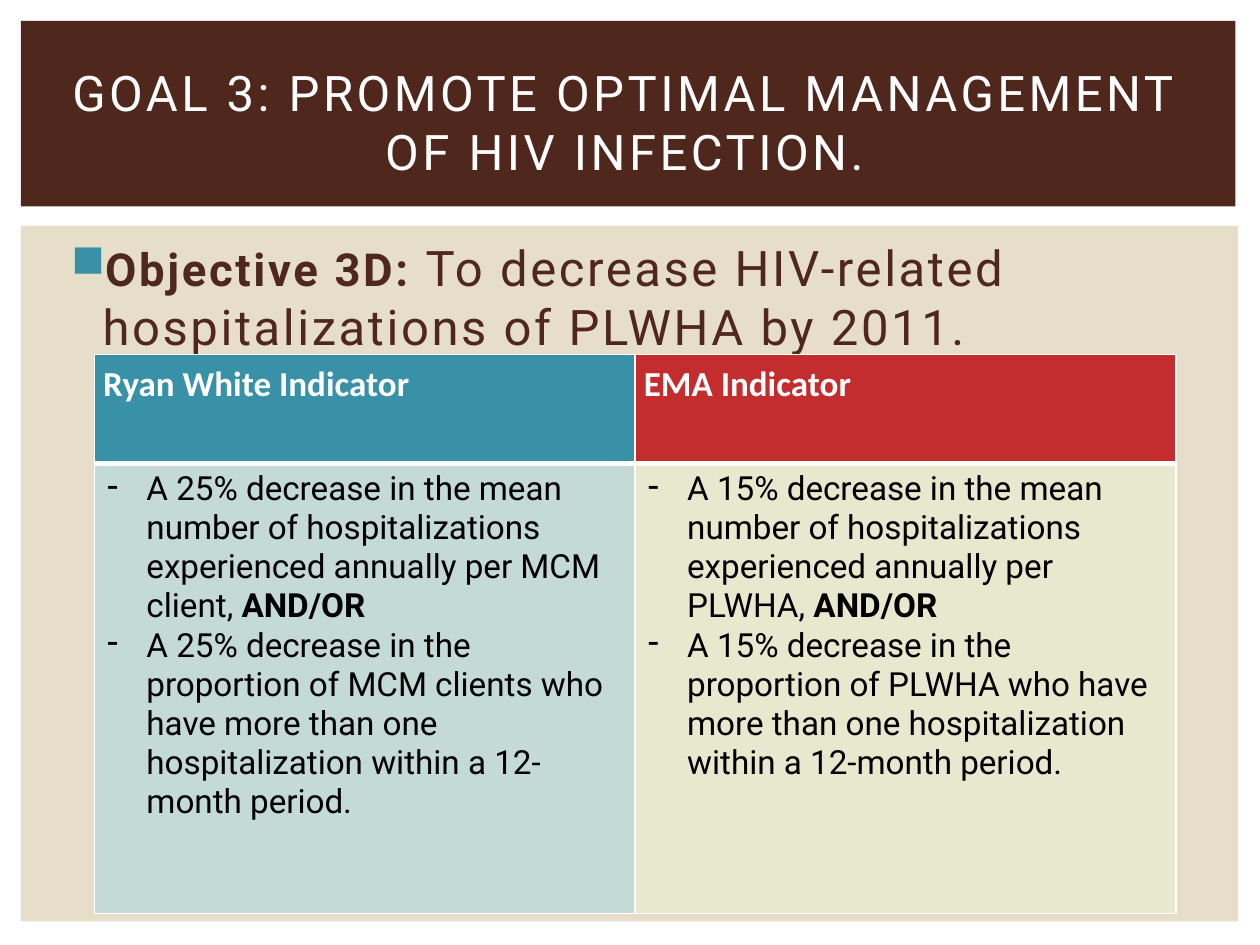
from lxml.etree import SubElement
from pptx import Presentation
from pptx.dml.color import RGBColor
from pptx.enum.shapes import MSO_SHAPE
from pptx.enum.text import MSO_ANCHOR, PP_ALIGN
from pptx.oxml.ns import qn
from pptx.util import Pt

COLORS = {
    "sand": "E7DEC9", "brown": "4F271C", "white": "FFFFFF", "black": "000000",
    "teal": "3891A7", "red": "C32D2E", "pale_teal": "A9D7E2", "pale_green": "E8F2D3",
}
INDICATORS = [
    ("Ryan White Indicator", "teal", "pale_teal", "25%", "MCM client", "MCM clients"),
    ("EMA Indicator", "red", "pale_green", "15%", "PLWHA", "PLWHA"),
]


def rgb(color):
    """Return the named colour."""
    return RGBColor.from_string(COLORS[color])


def add_panel(slide, left, top, width, height, color):
    """Add a flat background rectangle."""
    panel = slide.shapes.add_shape(
        MSO_SHAPE.RECTANGLE, Pt(left), Pt(top), Pt(width), Pt(height))
    panel.shadow.inherit = False
    panel.fill.solid()
    panel.fill.fore_color.rgb = rgb(color)
    panel.line.fill.background()


def add_text_area(slide, left, top, width, height, anchor):
    """Add a wrapping text box and return its frame."""
    frame = slide.shapes.add_textbox(
        Pt(left), Pt(top), Pt(width), Pt(height)).text_frame
    frame.word_wrap = True
    frame.vertical_anchor = anchor
    return frame


def add_run(paragraph, text, size, color, bold=False, font="Roboto", spacing=0):
    """Append a formatted run, with letter spacing in points."""
    run = paragraph.add_run()
    run.text = text
    run.font.name = font
    run.font.size = Pt(size)
    run.font.bold = bold
    run.font.color.rgb = rgb(color)
    if spacing:
        run.font._element.set("spc", str(int(spacing * 100)))


def set_bullet(paragraph, mark, margin, hanging, color=None):
    """Give a paragraph a hanging bullet."""
    properties = paragraph._p.get_or_add_pPr()
    properties.set("marL", str(Pt(margin)))
    properties.set("indent", str(-Pt(hanging)))
    if color:
        bullet_color = SubElement(properties, qn("a:buClr"))
        SubElement(bullet_color, qn("a:srgbClr"), val=COLORS[color])
    SubElement(properties, qn("a:buChar"), char=mark)


def style_cell(cell, color, bottom_width, opacity=100):
    """Set white cell borders and a fill of the given opacity."""
    properties = cell._tc.get_or_add_tcPr()
    for side, width in (("L", 1), ("R", 1), ("T", 1), ("B", bottom_width)):
        border = SubElement(properties, qn(f"a:ln{side}"), w=str(Pt(width)))
        fill = SubElement(border, qn("a:solidFill"))
        SubElement(fill, qn("a:srgbClr"), val=COLORS["white"])
    cell.fill.solid()
    cell.fill.fore_color.rgb = rgb(color)
    if opacity < 100:
        tint = properties.find(qn("a:solidFill")).find(qn("a:srgbClr"))
        SubElement(tint, qn("a:alpha"), val=str(opacity * 1000))


def fill_heading(cell, heading, color):
    """Write an indicator heading."""
    cell.margin_left = cell.margin_right = Pt(5)
    cell.margin_top = cell.margin_bottom = Pt(5)
    add_run(cell.text_frame.paragraphs[0], heading, 20, "white", True, "Calibri")
    style_cell(cell, color, 3)


def fill_targets(cell, color, rate, person, people):
    """Write the two targets of an indicator."""
    mean = cell.text_frame.paragraphs[0]
    proportion = cell.text_frame.add_paragraph()
    add_run(mean, f"A {rate} decrease in the mean number of hospitalizations "
            f"experienced annually per {person}, ", 19, "black")
    add_run(mean, "AND/OR", 19, "black", True)
    add_run(proportion, f"A {rate} decrease in the proportion of {people} who have "
            "more than one hospitalization within a 12-month period.", 19, "black")
    for target in (mean, proportion):
        set_bullet(target, "-", 22.5, 22.5)
    style_cell(cell, color, 1, 55)


def add_indicator_table(slide):
    """Add the table with one column per indicator."""
    table = slide.shapes.add_table(
        2, len(INDICATORS), Pt(54), Pt(202.5), Pt(618), Pt(319.5)).table
    table.rows[0].height, table.rows[1].height = Pt(62.5), Pt(257)
    for column, (heading, strong, pale, *target) in enumerate(INDICATORS):
        fill_heading(table.cell(0, column), heading, strong)
        fill_targets(table.cell(1, column), pale, *target)


def main():
    """Build the slide and save it."""
    deck = Presentation()
    deck.slide_width, deck.slide_height = Pt(720), Pt(540)
    slide = deck.slides.add_slide(deck.slide_layouts[6])
    add_panel(slide, 12, 129, 695.5, 397.5, "sand")
    add_panel(slide, 12, 12, 694, 106, "brown")

    objective = add_text_area(slide, 30, 132, 662, 72, MSO_ANCHOR.TOP).paragraphs[0]
    objective.space_before = Pt(5.6)
    set_bullet(objective, "■", 21.6, 18, "teal")
    add_run(objective, "Objective 3D: ", 26, "brown", True, spacing=1.5)
    add_run(objective, "To decrease HIV-related hospitalizations of PLWHA by 2011.",
            28, "brown", spacing=1.5)

    goal = add_text_area(slide, 12, 28, 690, 83, MSO_ANCHOR.MIDDLE).paragraphs[0]
    goal.alignment = PP_ALIGN.CENTER
    add_run(goal, "GOAL 3: PROMOTE OPTIMAL MANAGEMENT OF HIV INFECTION.",
            28, "white", spacing=2)

    add_indicator_table(slide)
    deck.save("out.pptx")


if __name__ == "__main__":
    main()
